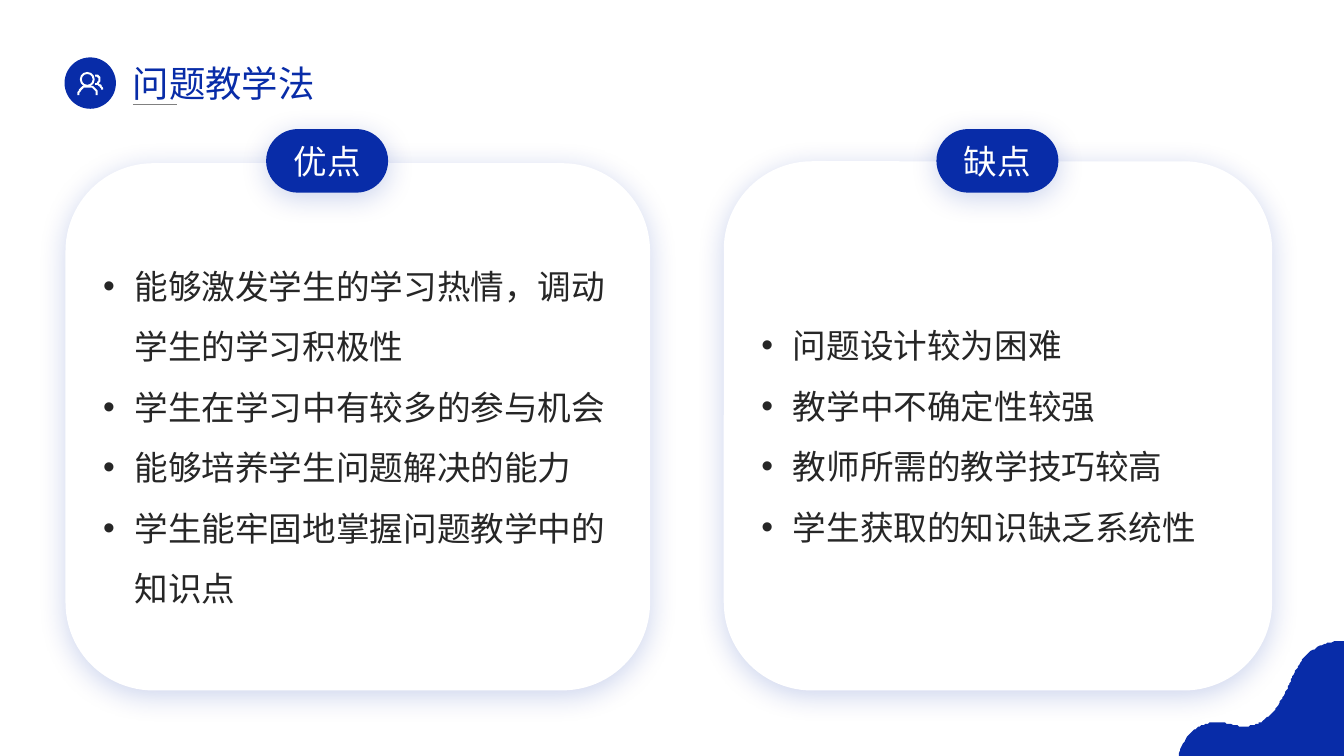
"""Build a slide comparing the strengths and weaknesses of problem-based teaching."""
import lxml.etree
import pptx
import pptx.dml.color
import pptx.enum.shapes
import pptx.enum.text
import pptx.oxml
import pptx.oxml.ns
import pptx.util

Pt = pptx.util.Pt
SHAPES = pptx.enum.shapes.MSO_SHAPE
ALIGN = pptx.enum.text.PP_ALIGN
ANCHOR = pptx.enum.text.MSO_ANCHOR
FONT = "Noto Sans CJK SC"
COLORS = {"blue": "082CA8", "white": "FFFFFF", "text": "262626", "gray": "808080"}
SHADOW = (
    f'<a:outerShdw {pptx.oxml.ns.nsdecls("a")} blurRad="{Pt(20)}" dist="{Pt(4)}" '
    f'dir="5400000" algn="t" rotWithShape="0"><a:srgbClr val="{COLORS["blue"]}">'
    '<a:alpha val="20000"/></a:srgbClr></a:outerShdw>'
)


class SlideBuilder:
    """Hold the slide and its style, and add each kind of element."""

    def __init__(self, slide):
        self.slide = slide

    def color(self, name):
        return pptx.dml.color.RGBColor.from_string(COLORS[name])

    def paint(self, shape, fill=None, line=None, weight=1.4):
        shape.shadow.inherit = False
        if fill:
            shape.fill.solid()
            shape.fill.fore_color.rgb = self.color(fill)
        else:
            shape.fill.background()
        if line:
            shape.line.color.rgb = self.color(line)
            shape.line.width = Pt(weight)
        else:
            shape.line.fill.background()

    def shape(self, kind, box, fill=None, line=None, shadow=False):
        shape = self.slide.shapes.add_shape(kind, *map(Pt, box))
        self.paint(shape, fill, line)
        if shadow:
            effects = shape._element.spPr.find(pptx.oxml.ns.qn("a:effectLst"))
            effects.append(pptx.oxml.parse_xml(SHADOW))
        return shape

    def curve(self, start, cubics, corners=(), fill=None, line=None, steps=12):
        points, current = [], start
        for first, second, end in cubics:
            for step in range(1, steps + 1):
                t = step / steps
                weights = ((1 - t) ** 3, 3 * t * (1 - t) ** 2, 3 * t * t * (1 - t), t ** 3)
                controls = (current, first, second, end)
                points.append(tuple(
                    sum(weight * control[axis] for weight, control in zip(weights, controls))
                    for axis in (0, 1)))
            current = end
        builder = self.slide.shapes.build_freeform(*start, scale=Pt(1))
        builder.add_line_segments(points + list(corners), close=bool(fill))
        self.paint(builder.convert_to_shape(), fill, line)

    def rule(self, left, top, right, color, weight):
        connector = self.slide.shapes.add_connector(
            pptx.enum.shapes.MSO_CONNECTOR.STRAIGHT, Pt(left), Pt(top), Pt(right), Pt(top))
        connector.line.color.rgb = self.color(color)
        connector.line.width = Pt(weight)
        lxml.etree.SubElement(connector._element.spPr, pptx.oxml.ns.qn("a:effectLst"))

    def format_run(self, run, size, color):
        run.font.size = Pt(size)
        run.font.name = FONT
        run.font.color.rgb = self.color(color)
        east_asian = lxml.etree.SubElement(run.font._element, pptx.oxml.ns.qn("a:ea"))
        east_asian.set("typeface", FONT)

    def set_text(self, shape, lines, size, color, align=ALIGN.LEFT):
        frame = shape.text_frame
        frame.text = "\n".join(lines)
        for paragraph in frame.paragraphs:
            paragraph.alignment = align
            for run in paragraph.runs:
                self.format_run(run, size, color)

    def title(self, text, box):
        shape = self.slide.shapes.add_textbox(*map(Pt, box))
        shape.text_frame.word_wrap = False
        shape.text_frame.auto_size = pptx.enum.text.MSO_AUTO_SIZE.SHAPE_TO_FIT_TEXT
        self.set_text(shape, [text], 26, "blue")

    def card(self, box, items):
        shape = self.shape(SHAPES.ROUNDED_RECTANGLE, box, "white", shadow=True)
        frame = shape.text_frame
        frame.word_wrap = True
        frame.vertical_anchor = ANCHOR.MIDDLE
        frame.margin_left = frame.margin_right = Pt(8.5)
        self.set_text(shape, items, 24, "text")
        for paragraph in frame.paragraphs:
            paragraph.line_spacing = 1.5
            properties = paragraph._p.get_or_add_pPr()
            properties.set("marL", str(Pt(22.5)))
            properties.set("indent", str(-Pt(22.5)))
            font = lxml.etree.SubElement(properties, pptx.oxml.ns.qn("a:buFont"))
            font.set("typeface", "Arial")
            bullet = lxml.etree.SubElement(properties, pptx.oxml.ns.qn("a:buChar"))
            bullet.set("char", "•")

    def label(self, left, text):
        box = (left, 92.2, 87.1, 45.4)
        shape = self.shape(SHAPES.ROUNDED_RECTANGLE, box, "blue", shadow=True)
        shape.adjustments[0] = 0.5
        shape.text_frame.vertical_anchor = ANCHOR.MIDDLE
        self.set_text(shape, [text], 24, "white", ALIGN.CENTER)


def main():
    presentation = pptx.Presentation()
    presentation.slide_width, presentation.slide_height = Pt(960), Pt(540)
    builder = SlideBuilder(presentation.slides.add_slide(presentation.slide_layouts[6]))

    wave = [
        ((949.7, 458.6), (943.9, 460.1), (938.9, 463.7)),
        ((933.8, 466.6), (930.2, 470.9), (927.4, 475.9)),
        ((924.5, 480.2), (922.3, 485.3), (920.2, 490.3)),
        ((918, 495.4), (915.1, 500.4), (912.2, 504.7)),
        ((909.4, 509), (905.8, 512.6), (900.7, 515.5)),
        ((897.8, 517), (895, 518.4), (891.4, 518.6)),
        ((887, 519.1), (882.7, 518.4), (878.4, 517)),
        ((874.1, 516), (869.8, 515.5), (865.4, 516.2)),
        ((861, 516.8), (857, 518.6), (853.2, 521.3)),
        ((846.7, 525.6), (843.1, 532.8), (841.7, 540)),
    ]
    builder.curve((956.2, 457.9), wave, [(960, 540), (960, 457.9)], fill="blue")

    builder.shape(SHAPES.OVAL, (46.1, 41, 36.7, 36.7), "blue")
    builder.shape(SHAPES.OVAL, (57.7, 52.1, 9.2, 9.2), line="white")
    front_body = [((56.2, 64), (59, 61.6), (62.6, 61.6)), ((66.2, 61.6), (69.1, 64), (69.1, 67.7))]
    builder.curve((56.2, 67.7), front_body, line="white")
    builder.curve((67.5, 54), [((72.3, 53), (72.3, 60.5), (67.7, 59.8))], line="white")
    builder.curve((67.5, 59.8), [((70.5, 59.8), (72.9, 61.4), (72.9, 64.1))], line="white")

    builder.rule(95, 74.9, 126.7, "gray", 0.5)
    builder.title("问题教学法", (87.8, 40.3, 146.2, 38.9))

    builder.card((517, 115.2, 391.7, 378), [
        "问题设计较为困难",
        "教学中不确定性较强",
        "教师所需的教学技巧较高",
        "学生获取的知识缺乏系统性",
    ])
    builder.label(668.9, "缺点")
    builder.card((46.8, 116.6, 417.6, 376.6), [
        "能够激发学生的学习热情，调动学生的学习积极性",
        "学生在学习中有较多的参与机会",
        "能够培养学生问题解决的能力",
        "学生能牢固地掌握问题教学中的知识点",
    ])
    builder.label(190.1, "优点")
    presentation.save("out.pptx")


if __name__ == "__main__":
    main()
